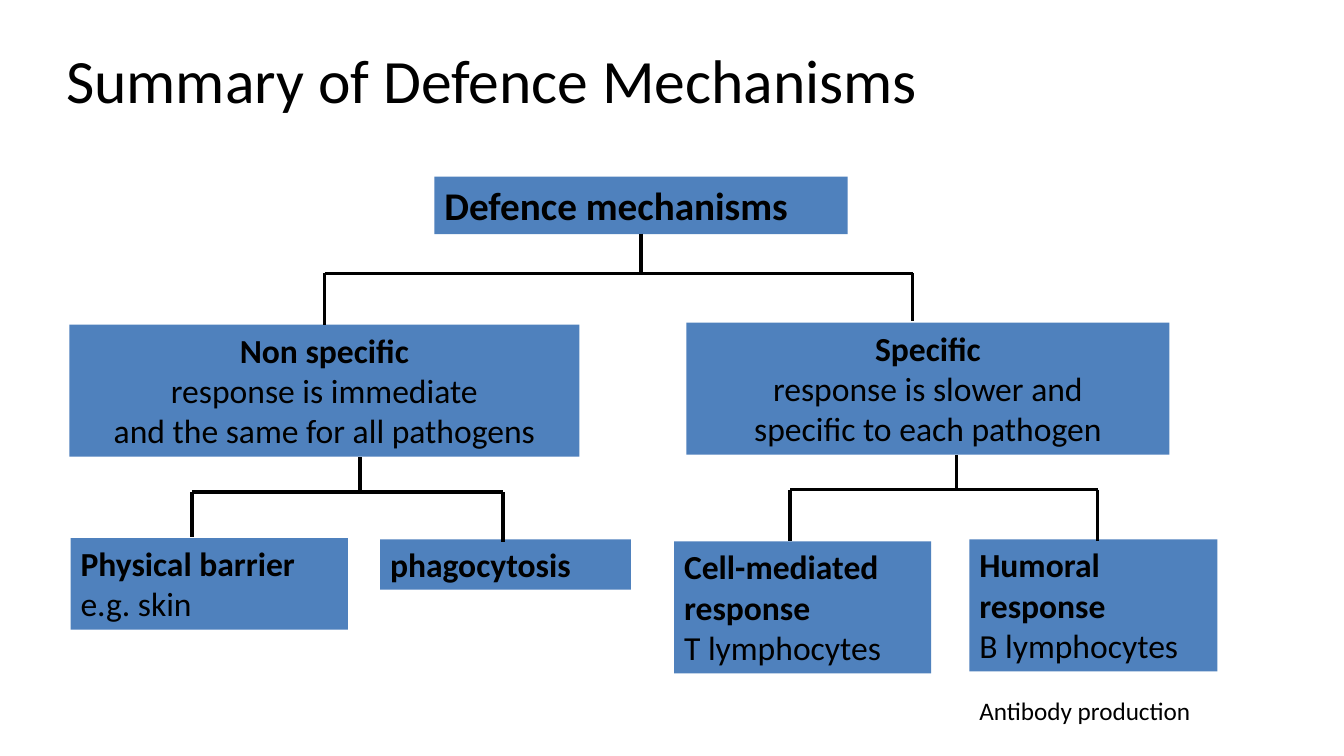
from pptx import Presentation
from pptx.dml.color import RGBColor
from pptx.enum.shapes import MSO_CONNECTOR, MSO_SHAPE
from pptx.enum.text import MSO_ANCHOR, PP_ALIGN
from pptx.oxml.ns import qn
from pptx.util import Cm, Pt
from lxml import etree

BLUE = RGBColor(0x4F, 0x81, 0xBD)
BLACK = RGBColor(0, 0, 0)
FONT = "Calibri"
LEFT, MID = PP_ALIGN.LEFT, PP_ALIGN.CENTER
TOP, CENTER = MSO_ANCHOR.TOP, MSO_ANCHOR.MIDDLE
RECT, LINE = MSO_SHAPE.RECTANGLE, MSO_CONNECTOR.STRAIGHT

# (left, top, width, height) in cm, size, alignment, bold first line, plain lines
BOXES = [
    ((10.95, 4.45, 10.41, 1.45), 28, LEFT, "Defence mechanisms", []),
    ((1.75, 8.18, 12.85, 3.33), 24, MID, "Non specific",
     ["response is immediate", "and the same for all pathogens"]),
    ((17.3, 8.13, 12.17, 3.33), 24, MID, "Specific",
     ["response is slower and", "specific to each pathogen"]),
    ((1.78, 13.56, 6.99, 2.31), 24, LEFT, "Physical barrier", ["e.g. skin"]),
    ((9.58, 13.59, 6.32, 1.27), 24, LEFT, "phagocytosis", []),
    ((16.99, 13.64, 6.48, 3.33), 24, LEFT, "Cell-mediated response",
     ["T lymphocytes"]),
    ((24.43, 13.59, 6.25, 3.33), 24, LEFT, "Humoral response",
     ["B lymphocytes"]),
]

# stem x, stem top, bar y, then (x, foot y) of the left and right legs, in cm
FORKS = [
    (16.15, 5.89, 6.89, (8.18, 8.18), (23, 8.08)),
    (9.07, 11.52, 12.4, (4.84, 13.52), (12.67, 13.66)),
    (24.1, 11.46, 12.34, (19.91, 13.64), (27.66, 13.64)),
]

# place, size, anchor, line spacing, text
LABELS = [
    ((1.42, 0.94, 27, 2.31), 44, CENTER, 0.9, "Summary of Defence Mechanisms"),
    ((24.43, 17.4, 7.11, 1.02), 18, TOP, 1, "Antibody production"),
]


def write(shape, lines, size, align=LEFT, anchor=TOP, space=1):
    """Fill a shape with (text, bold) lines, one paragraph each."""
    frame = shape.text_frame
    frame.word_wrap = True
    frame.vertical_anchor = anchor
    for i, (text, bold) in enumerate(lines):
        para = frame.add_paragraph() if i else frame.paragraphs[0]
        para.alignment = align
        para.line_spacing = space
        run = para.add_run()
        run.text = text
        run.font.name = FONT
        run.font.size = Pt(size)
        run.font.bold = bold
        run.font.color.rgb = BLACK


def add_box(slide, place, size, align, head, rest):
    box = slide.shapes.add_shape(RECT, *map(Cm, place))
    box.shadow.inherit = False
    box.fill.solid()
    box.fill.fore_color.rgb = BLUE
    box.line.fill.background()
    write(box, [(head, True)] + [(text, False) for text in rest], size, align)


def add_line(slide, *ends):
    line = slide.shapes.add_connector(LINE, *map(Cm, ends))
    line.line.color.rgb = BLACK
    line.line.width = Pt(2.5)
    etree.SubElement(line._element.spPr, qn("a:effectLst"))


def add_fork(slide, stem, top, bar, *legs):
    add_line(slide, legs[0][0], bar, legs[1][0], bar)
    for x, foot in legs:
        add_line(slide, x, bar, x, foot)
    add_line(slide, stem, top, stem, bar)


def main():
    deck = Presentation()
    deck.slide_width, deck.slide_height = Cm(33.87), Cm(19.05)
    slide = deck.slides.add_slide(deck.slide_layouts[6])
    for box in BOXES:
        add_box(slide, *box)
    for fork in FORKS:
        add_fork(slide, *fork)
    for place, size, anchor, space, text in LABELS:
        label = slide.shapes.add_textbox(*map(Cm, place))
        write(label, [(text, False)], size, anchor=anchor, space=space)
    deck.save("out.pptx")


if __name__ == "__main__":
    main()
